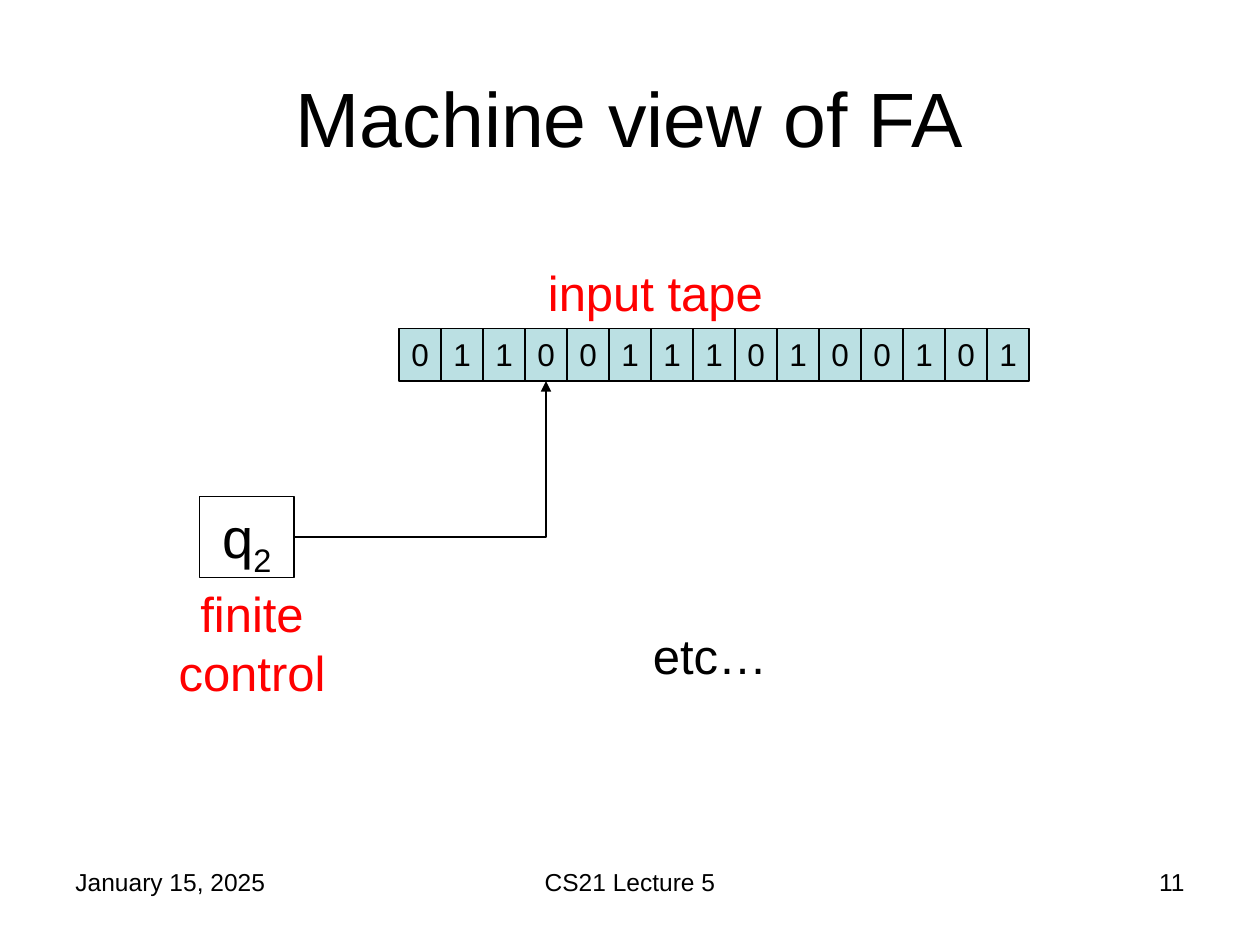
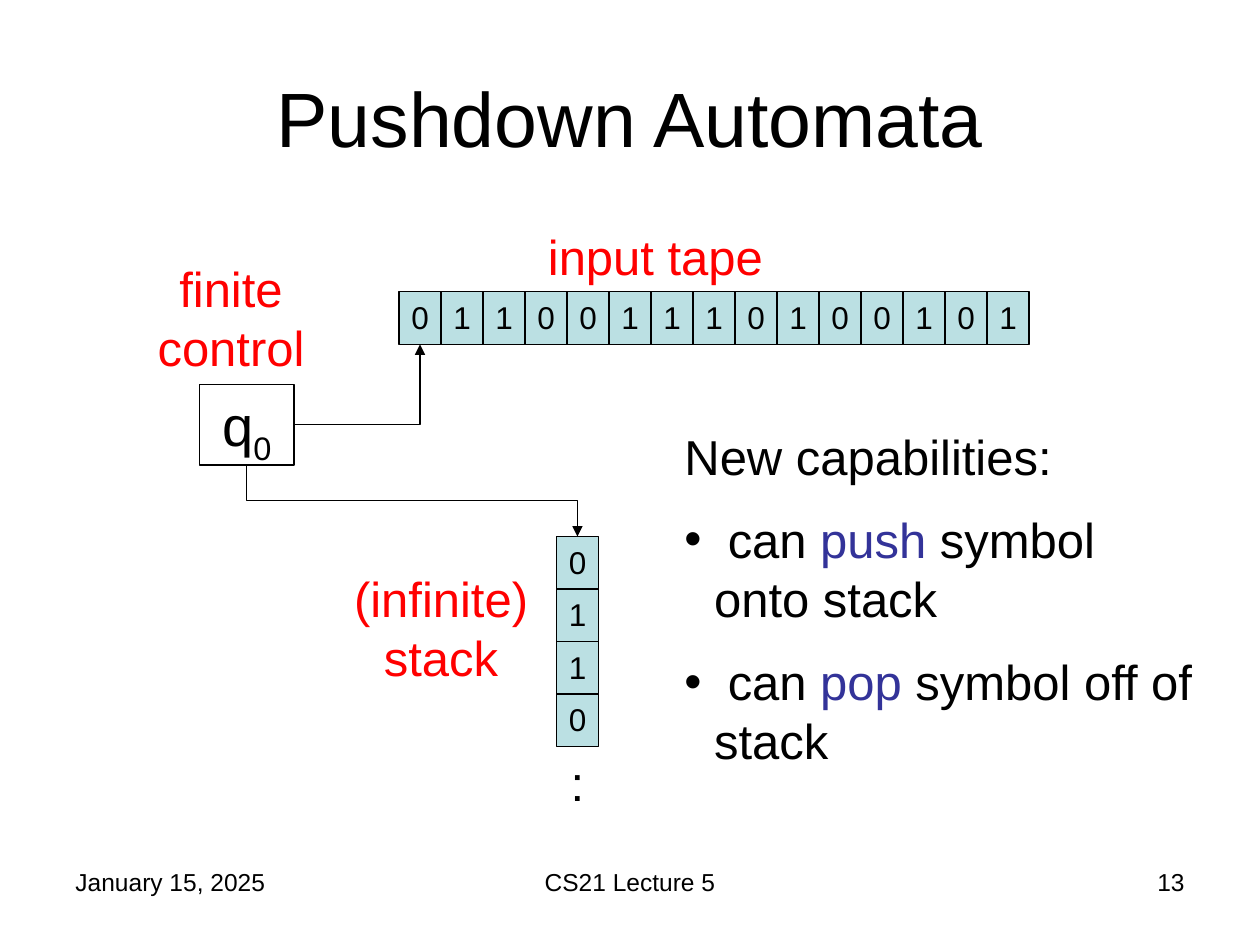
from dataclasses import dataclass

from lxml import etree
from pptx import Presentation
from pptx.dml.color import RGBColor
from pptx.enum.shapes import MSO_CONNECTOR, MSO_SHAPE
from pptx.enum.text import MSO_ANCHOR, MSO_AUTO_SIZE, PP_ALIGN
from pptx.oxml.ns import qn
from pptx.util import Emu, Inches, Pt

LEFT, MID, RIGHT = PP_ALIGN.LEFT, PP_ALIGN.CENTER, PP_ALIGN.RIGHT
TOP, CENTER = MSO_ANCHOR.TOP, MSO_ANCHOR.MIDDLE
GROW = MSO_AUTO_SIZE.SHAPE_TO_FIT_TEXT
RECT, ELBOW = MSO_SHAPE.RECTANGLE, MSO_CONNECTOR.ELBOW
SIDE_TOP, SIDE_LOW, SIDE_RIGHT = 0, 2, 3

WIDE, HIGH = Inches(10), Inches(7.5)
COLS, ROWS = 120, 90
FONT = "Arial"
BLACK, RED, BLUE, AQUA = "000000", "FF0000", "333399", "BBE0E3"
CELL_W, CELL_H = 4, 5
TAPE_X = 38
TAPE = "011001110100101"
STACK = "0110"
STACK_X, STACK_Y = 53, 51.1


@dataclass
class Area:
    x: float
    y: float
    w: float
    h: float

    def emu(self) -> tuple[Emu, Emu, Emu, Emu]:
        return col(self.x), row(self.y), col(self.w), row(self.h)


@dataclass
class Style:
    size: int
    color: str = BLACK
    align: PP_ALIGN = LEFT
    anchor: MSO_ANCHOR = TOP
    grow: bool = True


@dataclass
class Label:
    text: str
    area: Area
    style: Style


HEAD = Style(44, align=MID, anchor=CENTER, grow=False)
DIGIT = Style(18, align=MID)
STATE = Style(32, align=MID)
NAME = Style(28, RED)
NAME_MID = Style(28, RED, MID)
BODY = Style(28)
BODY_MID = Style(28, align=MID)


def col(n: float) -> Emu:
    return Emu(round(WIDE * n / COLS))


def row(n: float) -> Emu:
    return Emu(round(HIGH * n / ROWS))


def rgb(code: str) -> RGBColor:
    return RGBColor.from_string(code)


def format_run(run, style: Style) -> None:
    run.font.name = FONT
    run.font.size = Pt(style.size)
    run.font.color.rgb = rgb(style.color)


def format_text(frame, style: Style) -> None:
    frame.word_wrap = True
    frame.vertical_anchor = style.anchor
    if style.grow:
        frame.auto_size = GROW
    for para in frame.paragraphs:
        para.alignment = style.align
        if style.grow:
            para.space_before = Pt(style.size / 2)
        for run in para.runs:
            format_run(run, style)


def add_label(slide, label: Label):
    box = slide.shapes.add_textbox(*label.area.emu())
    box.text_frame.text = label.text
    format_text(box.text_frame, label.style)
    return box


def add_box(slide, text: str, area: Area, style: Style, fill: str = ""):
    box = slide.shapes.add_shape(RECT, *area.emu())
    box.shadow.inherit = False
    if fill:
        box.fill.solid()
        box.fill.fore_color.rgb = rgb(fill)
    else:
        box.fill.background()
    box.line.color.rgb = rgb(BLACK)
    box.line.width = Pt(0.75)
    box.text_frame.text = text
    format_text(box.text_frame, style)
    return box


def add_cells(slide, digits: str, x: float, y: float, dx: int, dy: int) -> list:
    return [
        add_box(slide, digit, Area(x + i * dx, y + i * dy, CELL_W, CELL_H), DIGIT, AQUA)
        for i, digit in enumerate(digits)
    ]


def add_state(slide, index: str, y: float):
    box = add_box(slide, "q", Area(19, y, 9, 7.7), STATE)
    run = box.text_frame.paragraphs[0].add_run()
    run.text = index
    format_run(run, STATE)
    run.font._element.set("baseline", "-25000")
    return box


def add_link(slide, start, side: int, end, goal: int):
    link = slide.shapes.add_connector(ELBOW, 0, 0, 0, 0)
    link.begin_connect(start, side)
    link.end_connect(end, goal)
    link.line.color.rgb = rgb(BLACK)
    link.line.width = Pt(0.75)
    etree.SubElement(link.line._get_or_add_ln(), qn("a:tailEnd"), type="triangle")
    etree.SubElement(link._element.spPr, qn("a:effectLst"))
    return link


def link_tape(slide, state, cell) -> None:
    link = add_link(slide, state, SIDE_RIGHT, cell, SIDE_LOW)
    link._element.spPr.find(qn("a:prstGeom")).set("prst", "bentConnector2")


def link_stack(slide, state, cell) -> None:
    link = add_link(slide, state, SIDE_LOW, cell, SIDE_TOP)
    x, y, w, h = link.left, link.top, link.width, link.height
    link.left, link.top = x + (w - h) // 2, y + (h - w) // 2
    link.width, link.height = h, w
    form = link._element.spPr.find(qn("a:xfrm"))
    form.set("rot", "16200000")
    form.set("flipH", "1")


def add_powers(slide) -> None:
    box = add_label(slide, Label("New capabilities:", Area(64, 40, 51, 34.8), BODY))
    for verb, rest in (("push", " symbol onto stack"), ("pop", " symbol off of stack")):
        para = box.text_frame.add_paragraph()
        for text in (" can ", verb, rest):
            para.add_run().text = text
        props = para._p.get_or_add_pPr()
        props.set("marL", str(Pt(17)))
        props.set("indent", str(-Pt(17)))
        etree.SubElement(props, qn("a:buFont"), typeface=FONT)
        etree.SubElement(props, qn("a:buChar"), char="•")
    format_text(box.text_frame, BODY)
    for para in box.text_frame.paragraphs[1:]:
        para.runs[1].font.color.rgb = rgb(BLUE)


def start_slide(deck, title: str, page: int):
    slide = deck.slides.add_slide(deck.slide_layouts[6])
    foot = (
        ("January 15, 2025", 6, 28, LEFT),
        ("CS21 Lecture 5", 41, 38, MID),
        (str(page), 86, 28, RIGHT),
    )
    for text, x, w, align in foot:
        style = Style(14, align=align, grow=False)
        add_label(slide, Label(text, Area(x, 82, w, 6.25), style))
    add_label(slide, Label(title, Area(6, 3.6, 108, 15), HEAD))
    return slide


def add_machine(slide, index: str, head: int, tape_y: float, state_y: float, name: Area):
    tape = add_cells(slide, TAPE, TAPE_X, tape_y, CELL_W, 0)
    state = add_state(slide, index, state_y)
    add_label(slide, Label("input tape", Area(51, tape_y - 6.85, 28, 6.85), NAME))
    add_label(slide, Label("finite control", name, NAME_MID))
    link_tape(slide, state, tape[head])
    return state


def draw_finite(deck) -> None:
    slide = start_slide(deck, "Machine view of FA", 11)
    add_machine(slide, "2", 3, 31.3, 47.3, Area(13, 55, 22, 12.4))
    add_label(slide, Label("etc…", Area(61, 59, 30, 6.85), BODY))


def draw_stack(deck) -> None:
    slide = start_slide(deck, "Pushdown Automata", 13)
    state = add_machine(slide, "0", 0, 27.8, 36.6, Area(11, 24, 22, 12.4))
    stack = add_cells(slide, STACK, STACK_X, STACK_Y, 0, CELL_H)
    low = STACK_Y + len(STACK) * CELL_H
    add_label(slide, Label(":", Area(STACK_X, low, CELL_W, 6.85), BODY_MID))
    link_stack(slide, state, stack[0])
    add_label(slide, Label("(infinite) stack", Area(31, 53.6, 22, 12.4), NAME_MID))
    add_powers(slide)


def main() -> None:
    deck = Presentation()
    deck.slide_width, deck.slide_height = WIDE, HIGH
    draw_finite(deck)
    draw_stack(deck)
    deck.save("out.pptx")


if __name__ == "__main__":
    main()
